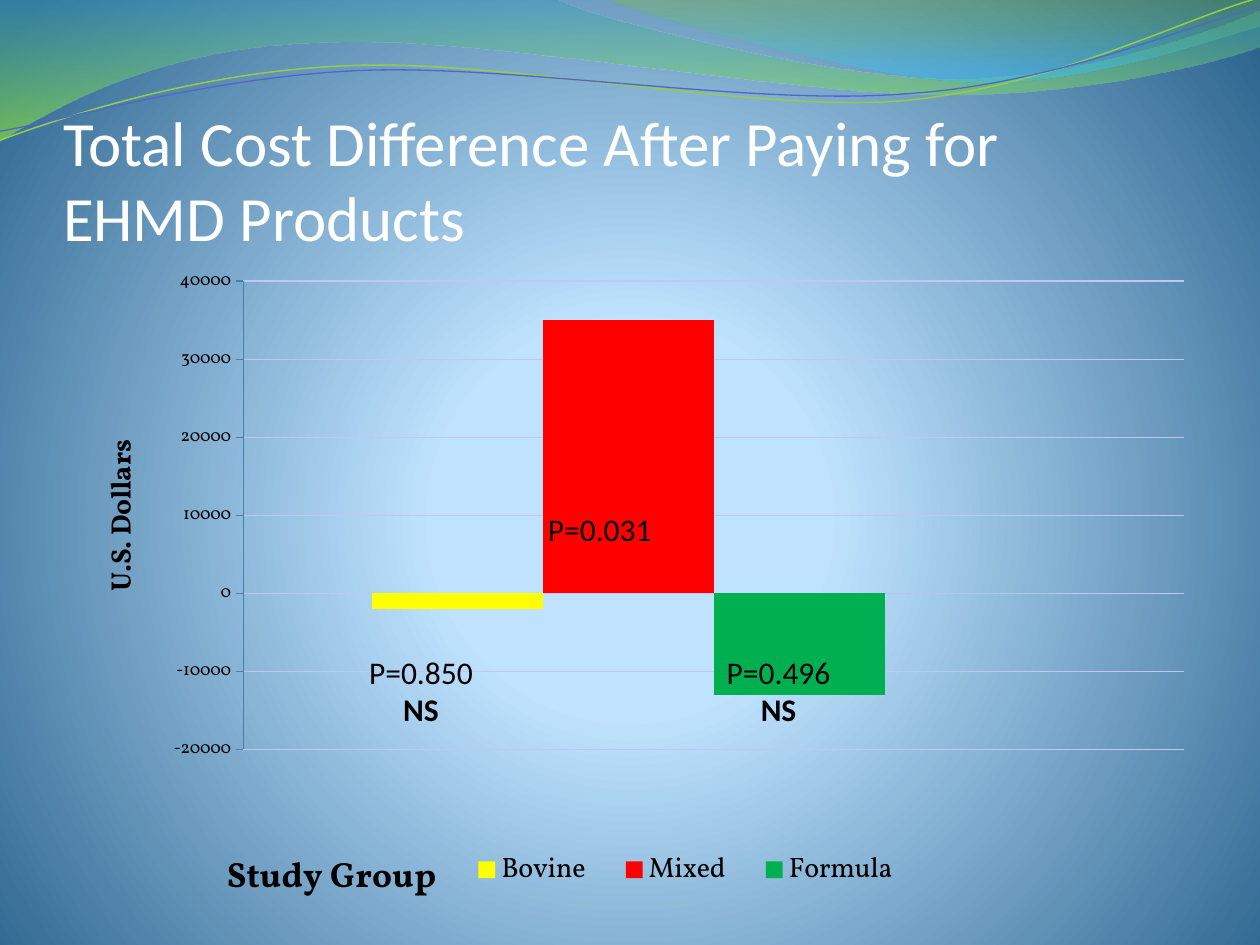
import math

from lxml import etree
from pptx import Presentation
from pptx import util as u
from pptx.chart.data import CategoryChartData
from pptx.dml.color import RGBColor
from pptx.enum import chart as charts, text
from pptx.oxml import parse_xml
from pptx.oxml.ns import nsdecls, qn

BANDS = [
    ([(0, 0), (4.4, -0.01), (4.76, 0.17, 6.64, 0.63, 7.58, 0.63),
      (8.53, 0.63, 9.58, 0.26, 10, 0.09), (10.01, 0.36),
      (9.83, 0.44, 8.7, 0.76, 7.46, 0.75), (6.22, 0.75, 3.82, 0.28, 2.57, 0.34),
      (1.29, 0.36, 0.46, 0.83, -0.01, 1.13)],
     [(0, "3B9CBF", 45), (100, "9CFA24", 55)]),
    ([(4.79, -0.01), (5.09, 0.11, 6.82, 0.62, 7.69, 0.65),
      (8.56, 0.69, 9.61, 0.32, 10, 0.21), (10, 0)],
     [(0, "7EBE2C", 30), (80, "39C1F1", 45)]),
]
WAVES = [
    ([(0, 1.11), (0.48, 0.93, 1.58, 0.57, 2.77, 0.52),
      (3.95, 0.47, 5.93, 0.89, 7.13, 0.8), (8.33, 0.71, 9.38, 0.15, 9.98, -0.02)],
     "93CE48", 0.85, (4.99, 0.58)),
    ([(0, 1.04), (0.47, 0.96, 1.64, 0.61, 2.83, 0.56),
      (4.03, 0.51, 5.97, 0.84, 7.17, 0.75), (8.36, 0.67, 9.41, 0.21, 10, 0.06)],
     "4E67C8", 0.75, (5, 0.59)),
]
TILT = 357.3
SERIES = [("Bovine", -2000, "FFFF00"), ("Mixed", 35000, "FF0000"),
          ("Formula", -13000, "00B050"), ("Series 4", 0, "5DCEAF")]
P_VALUES = [(203.8, 369.4, 75.6, 51, ["P=0.850", "NS"]),
            (306, 288, 76, 29, ["P=0.031"]),
            (408.2, 369.4, 77, 51, ["P=0.496", "NS"])]
LINEAR = '<a:lin ang="5400000" scaled="0"/>'
RADIAL = ('<a:path path="circle"><a:fillToRect l="10000" t="110000" '
          'r="10000" b="100000"/></a:path>')


def color(value):
    """Return the colour of a hex string."""
    return RGBColor.from_string(value)


def style(font, tint="000000", **values):
    """Set the colour and the given attributes of a font."""
    font.color.rgb = color(tint)
    for name, value in values.items():
        setattr(font, name, value)


def shade(owner, stops, direction):
    """Replace the gradient inside an element with the given stops."""
    marks = "".join(
        f'<a:gs pos="{spot * 1000}"><a:srgbClr val="{tint}">'
        f'<a:alpha val="{alpha * 1000}"/></a:srgbClr></a:gs>'
        for spot, tint, alpha in stops)
    old = owner.find(".//" + qn("a:gradFill"))
    old.getparent().replace(old, parse_xml(
        f'<a:gradFill {nsdecls("a")} rotWithShape="1">'
        f'<a:gsLst>{marks}</a:gsLst>{direction}</a:gradFill>'))


def turn(step, center, degrees):
    """Rotate every point of a step clockwise around a center."""
    cos, sin = math.cos(math.radians(degrees)), math.sin(math.radians(degrees))
    turned = []
    for x, y in zip(step[::2], step[1::2]):
        x, y = x - center[0], y - center[1]
        turned += [center[0] + x * cos - y * sin, center[1] + x * sin + y * cos]
    return tuple(turned)


def add_outline(page, steps, close):
    """Add a freeform of lines and Bezier curves, given in inches."""
    points = [(x * 72, y * 72) for step in steps
              for x, y in zip(step[::2], step[1::2])]
    builder = page.shapes.build_freeform(*points[0], scale=u.Pt(1))
    builder.add_line_segments(points[1:], close=close)
    shape = builder.convert_to_shape()
    shape.shadow.inherit = False
    segments = iter(shape.element.findall(".//" + qn("a:lnTo")))
    for step in steps[1:]:
        parts = [next(segments) for _ in step[::2]]
        if len(parts) == 3:
            curve = etree.Element(qn("a:cubicBezTo"))
            parts[0].addprevious(curve)
            for part in parts:
                curve.append(part[0])
                part.getparent().remove(part)
    return shape


def add_band(page, steps, stops):
    """Add a translucent gradient band."""
    band = add_outline(page, steps, True)
    band.line.fill.background()
    band.fill.gradient()
    shade(band.element, stops, LINEAR)


def add_wave(page, steps, tint, width, center):
    """Add a thin, slightly tilted open curve."""
    wave = add_outline(page, [turn(step, center, -TILT) for step in steps], False)
    wave.rotation = TILT
    wave.fill.background()
    wave.line.color.rgb = color(tint)
    wave.line.width = u.Pt(width)


def set_title(page, words):
    """Place and format the title above the waves."""
    title = page.shapes.title
    title.left, title.top, title.width, title.height = map(u.Pt, (36, 55.4, 648, 90))
    frame = title.text_frame
    frame.text = words
    settings = dict(vertical_anchor=text.MSO_ANCHOR.BOTTOM, word_wrap=True,
                    auto_size=text.MSO_AUTO_SIZE.NONE, margin_left=0,
                    margin_right=0, margin_top=u.Pt(3.6), margin_bottom=0)
    for name, value in settings.items():
        setattr(frame, name, value)
    para = frame.paragraphs[0]
    para.alignment = text.PP_ALIGN.LEFT
    for span in para.runs:
        style(span.font, "FFFFFF", name="Calibri", size=u.Pt(36))
    title.element.getparent().append(title.element)


def layout(x, y, width=None, height=None, inner=False):
    """Return a manual chart layout in fractions of the chart."""
    target = '<c:layoutTarget val="inner"/>' if inner else ""
    size = f'<c:w val="{width}"/><c:h val="{height}"/>' if width else ""
    return parse_xml(
        f'<c:layout {nsdecls("c")}><c:manualLayout>{target}<c:xMode val="edge"/>'
        f'<c:yMode val="edge"/><c:x val="{x}"/><c:y val="{y}"/>{size}'
        '</c:manualLayout></c:layout>')


def place(element, after, new):
    """Put a layout into a chart element, after the named child if any."""
    for old in element.findall(qn("c:layout")):
        element.remove(old)
    if after is None:
        element.insert(0, new)
    else:
        element.find(qn(after)).addnext(new)


def name_axis(axis, words, size, x, y):
    """Give an axis a bold title at a fixed place."""
    frame = axis.axis_title.text_frame
    frame.text = words
    style(frame.paragraphs[0].runs[0].font, name="Vollkorn", size=u.Pt(size), bold=True)
    place(axis.axis_title._element, "c:tx", layout(x, y))


def format_legend(chart):
    """Show the legend at the bottom without the empty series."""
    chart.has_legend = True
    legend = chart.legend
    legend.position = charts.XL_LEGEND_POSITION.BOTTOM
    legend.include_in_layout = False
    style(legend.font, name="Vollkorn", size=u.Pt(16))
    place(legend._element, "c:legendPos", layout(0.33, 0.88, 0.42, 0.08))
    entry = etree.Element(qn("c:legendEntry"))
    for tag, value in (("c:idx", "3"), ("c:delete", "1")):
        etree.SubElement(entry, qn(tag)).set("val", value)
    legend._element.find(qn("c:legendPos")).addnext(entry)


def add_cost_chart(page):
    """Add the clustered columns of cost differences."""
    data = CategoryChartData(number_format="General")
    data.categories = ["1"]
    for name, value, _ in SERIES:
        data.add_series(name, [value])
    chart = page.shapes.add_chart(
        charts.XL_CHART_TYPE.COLUMN_CLUSTERED,
        *map(u.Pt, (41.8, 145.4, 648, 382.3)), data).chart
    chart.has_title = False
    style(chart.font, name="Vollkorn", size=u.Pt(10))
    plot = chart.plots[0]
    plot.gap_width, plot.overlap, plot.vary_by_categories = 150, 0, False
    for series, (_, _, tint) in zip(plot.series, SERIES):
        series.format.fill.solid()
        series.format.fill.fore_color.rgb = color(tint)
        series.invert_if_negative = False
    costs = chart.value_axis
    settings = dict(minimum_scale=-20000, maximum_scale=40000, major_unit=10000,
                    major_tick_mark=charts.XL_TICK_MARK.OUTSIDE)
    for name, value in settings.items():
        setattr(costs, name, value)
    for line, tint in ((costs.major_gridlines.format.line, "C1C7F2"),
                       (costs.format.line, "4A7FA8")):
        line.color.rgb = color(tint)
        line.width = u.Pt(0.75)
    name_axis(costs, "U.S. Dollars", 16, 0.02, 0.27)
    name_axis(chart.category_axis, "Study Group", 20, 0.13, 0.88)
    chart.category_axis.visible = False
    format_legend(chart)
    area = chart.element.find(".//" + qn("c:plotArea"))
    place(area, None, layout(0.15, 0.04, 0.83, 0.7, inner=True))


def add_p_value(page, left, top, width, height, lines):
    """Add a P value with an optional bold centred remark."""
    box = page.shapes.add_textbox(*map(u.Pt, (left, top, width, height)))
    frame = box.text_frame
    frame.text = "\n".join(lines)
    frame.word_wrap = False
    frame.auto_size = text.MSO_AUTO_SIZE.SHAPE_TO_FIT_TEXT
    for para in frame.paragraphs:
        style(para.runs[0].font, name="Calibri", size=u.Pt(18))
    for para in frame.paragraphs[1:]:
        para.alignment = text.PP_ALIGN.CENTER
        para.runs[0].font.bold = True


def main():
    """Build the cost difference page."""
    deck = Presentation()
    deck.slide_width, deck.slide_height = u.Pt(720), u.Pt(540)
    page = deck.slides.add_slide(deck.slide_layouts[5])
    page.background.fill.gradient()
    shade(page.element, [(0, "C2E4FF", 100), (25, "BFE3FF", 100),
                         (100, "2D658F", 100)], RADIAL)
    for band in BANDS:
        add_band(page, *band)
    for wave in WAVES:
        add_wave(page, *wave)
    set_title(page, "Total Cost Difference After Paying for\vEHMD Products")
    add_cost_chart(page)
    for p_value in P_VALUES:
        add_p_value(page, *p_value)
    deck.save("out.pptx")


if __name__ == "__main__":
    main()
